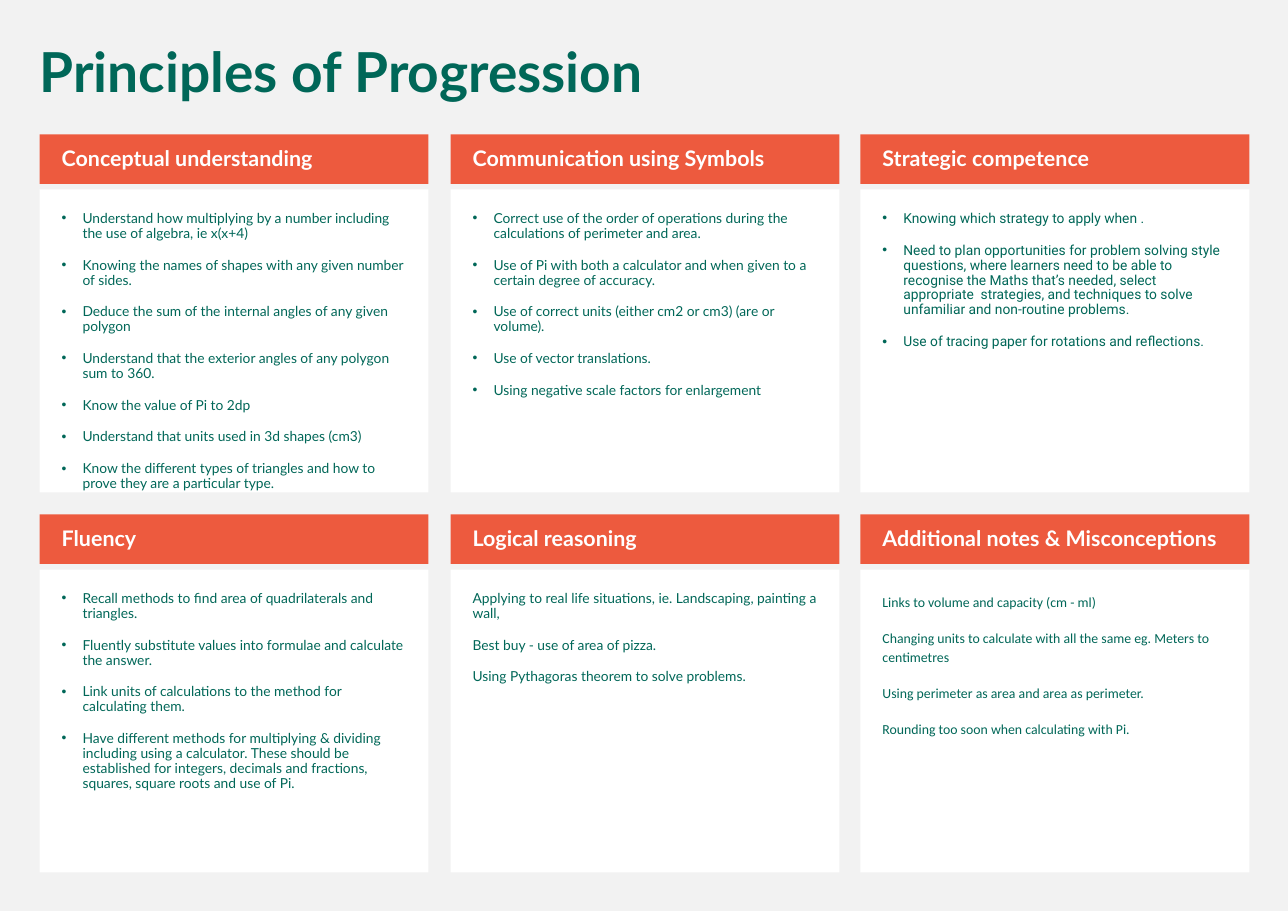
"""Build the Principles of Progression slide: six headed cards in a grid."""
from lxml.etree import SubElement
from pptx import Presentation
from pptx.dml.color import RGBColor
from pptx.enum.shapes import MSO_SHAPE as Shape
from pptx.enum.text import MSO_ANCHOR as Anchor, MSO_AUTO_SIZE as AutoSize, PP_ALIGN as Align
from pptx.oxml.ns import qn
from pptx.util import Inches, Pt

COLOURS = {"background": "F2F2F2", "card": "FFFFFF", "heading": "ED5A3E", "text": "006758"}
COLUMN_LEFTS = (0.36, 4.09, 7.81)
FIRST_TOP, ROW_PITCH = 1.22, 3.45
CARD_WIDTH, HEADING_HEIGHT, BODY_OFFSET, BODY_HEIGHT = 3.53, 0.45, 0.5, 2.75
BULLET_INDENT = 0.19

CARDS = [
    ("Conceptual understanding", {"bullet": True}, [
        "Understand how multiplying by a number including the use of algebra, ie x(x+4)",
        "Knowing the names of shapes with any given number of sides.",
        "Deduce the sum of the internal angles of any given polygon",
        "Understand that the exterior angles of any polygon sum to 360.",
        "Know the value of Pi to 2dp",
        "Understand that units used in 3d shapes (cm3)",
        "Know the different types of triangles and how to prove they are a particular type.",
    ]),
    ("Communication using Symbols", {"bullet": True}, [
        "Correct use of the order of operations during the calculations of perimeter and area.",
        "Use of Pi with both a calculator and when given to a certain degree of accuracy.",
        "Use of correct units (either cm2 or cm3) (are or volume).",
        "Use of vector translations.",
        "Using negative scale factors for enlargement",
    ]),
    ("Strategic competence", {"bullet": True, "font": "Roboto"}, [
        "Knowing which strategy to apply when .",
        "Need to plan opportunities for problem solving style questions, where learners need "
        "to be able to recognise the Maths that’s needed, select appropriate  strategies, "
        "and techniques to solve unfamiliar and non-routine problems.",
        "Use of tracing paper for rotations and reflections.",
    ]),
    ("Fluency", {"bullet": True}, [
        "Recall methods to find area of quadrilaterals and triangles.",
        "Fluently substitute values into formulae and calculate the answer.",
        "Link units of calculations to the method for calculating them.",
        "Have different methods for multiplying & dividing including using a calculator. "
        "These should be established for integers, decimals and fractions, squares, "
        "square roots and use of Pi.",
    ]),
    ("Logical reasoning", {}, [
        "Applying to real life situations, ie. Landscaping, painting a wall,",
        "Best buy - use of area of pizza.",
        "Using Pythagoras theorem to solve problems.",
    ]),
    ("Additional notes & Misconceptions", {"font": "Calibri", "line_spacing": 1.15}, [
        "Links to volume and capacity (cm - ml)",
        "Changing units to calculate with all the same eg. Meters to centimetres",
        "Using perimeter as area and area as perimeter.",
        "Rounding too soon when calculating with Pi.",
    ]),
]


def write_text(shape, texts, size=9, font="Lato", colour="text", bold=False, bullet=False,
               line_spacing=0.9, anchor=Anchor.TOP, insets=(0.2, 0.2, 0.2, 0.2)):
    frame = shape.text_frame
    frame.word_wrap = True
    frame.auto_size = AutoSize.NONE
    frame.vertical_anchor = anchor
    frame.margin_left, frame.margin_top, frame.margin_right, frame.margin_bottom = map(Inches, insets)
    for index, text in enumerate(texts):
        paragraph = frame.add_paragraph() if index else frame.paragraphs[0]
        paragraph.alignment = Align.LEFT
        paragraph.line_spacing = line_spacing
        paragraph.space_before = Pt(11)
        if bullet:
            properties = paragraph._p.get_or_add_pPr()
            properties.set("marL", str(Inches(BULLET_INDENT)))
            properties.set("indent", str(-Inches(BULLET_INDENT)))
            SubElement(properties, qn("a:buFont"), typeface="Arial")
            SubElement(properties, qn("a:buChar"), char="•")
        run = paragraph.add_run()
        run.text = text
        run.font.size = Pt(size)
        run.font.name = font
        run.font.bold = bold
        run.font.color.rgb = RGBColor.from_string(COLOURS[colour])


def add_panel(slide, left, top, height, colour):
    panel = slide.shapes.add_shape(
        Shape.RECTANGLE, Inches(left), Inches(top), Inches(CARD_WIDTH), Inches(height))
    panel.shadow.inherit = False
    panel.fill.solid()
    panel.fill.fore_color.rgb = RGBColor.from_string(COLOURS[colour])
    panel.line.fill.background()
    return panel


presentation = Presentation()
presentation.slide_width = Inches(11.69)
presentation.slide_height = Inches(8.27)
slide = presentation.slides.add_slide(presentation.slide_layouts.get_by_name("Title Only"))
slide.background.fill.solid()
slide.background.fill.fore_color.rgb = RGBColor.from_string(COLOURS["background"])

title = slide.shapes.title
title.left, title.top, title.width, title.height = map(Inches, (0.26, 0.36, 11.08, 0.65))
write_text(title, ["Principles of Progression"], size=36, bold=True, insets=(0.1, 0.05, 0.1, 0.05))

for index, (heading_text, body_format, points) in enumerate(CARDS):
    row, column = divmod(index, len(COLUMN_LEFTS))
    left = COLUMN_LEFTS[column]
    top = FIRST_TOP + row * ROW_PITCH
    body = add_panel(slide, left, top + BODY_OFFSET, BODY_HEIGHT, "card")
    write_text(body, points, **body_format)
    heading = add_panel(slide, left, top, HEADING_HEIGHT, "heading")
    write_text(heading, [heading_text], size=14, colour="card", bold=True,
               anchor=Anchor.MIDDLE, insets=(0.2, 0.05, 0.1, 0.05))

presentation.save("out.pptx")
